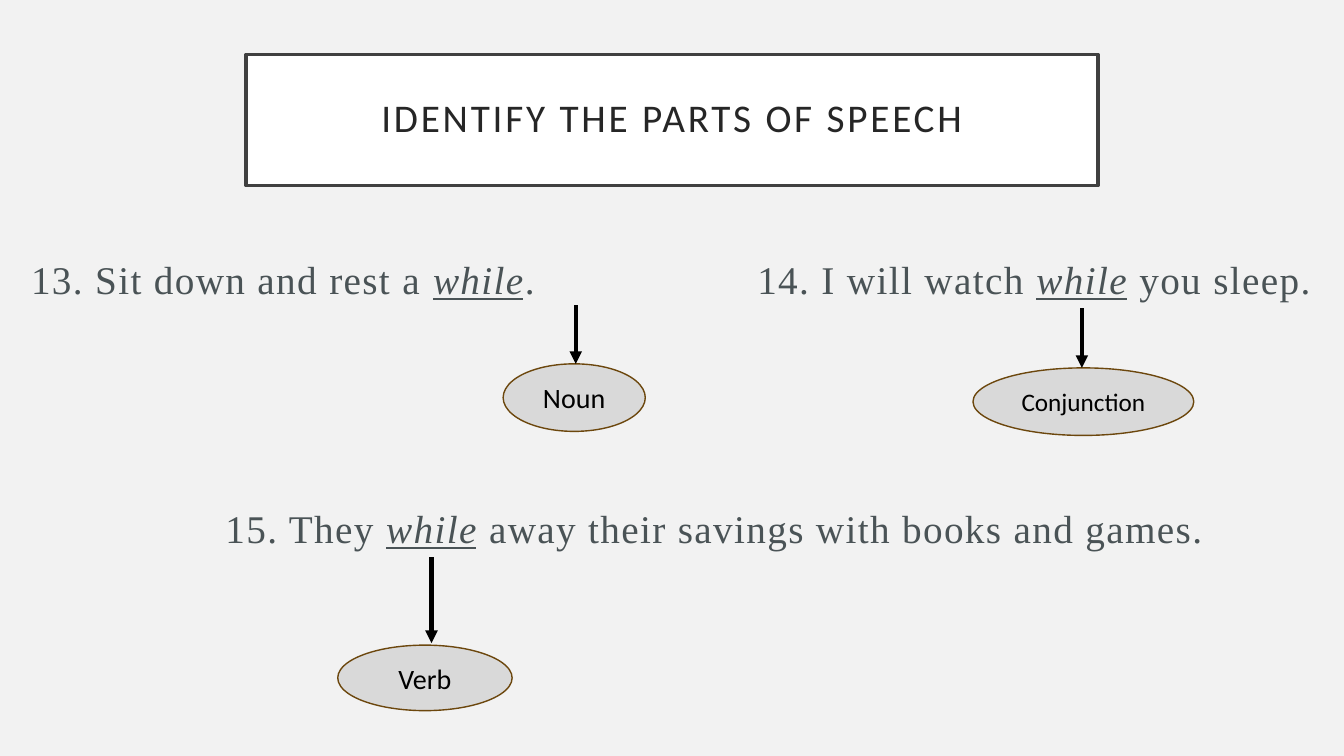
"""Build a slide that names the part of speech of one word in three sentences."""
from lxml.etree import SubElement
from pptx import Presentation
from pptx.dml.color import RGBColor
from pptx.enum.shapes import MSO_CONNECTOR, MSO_SHAPE
from pptx.enum.text import MSO_ANCHOR, PP_ALIGN
from pptx.oxml.ns import qn
from pptx.util import Inches, Pt

COLORS = {"back": "F2F2F2", "white": "FFFFFF", "frame": "404040", "title": "262626",
          "text": "4A5356", "oval": "D9D9D9", "rim": "6C470D", "black": "000000"}
TITLE = {"name": "Calibri", "size": Pt(28)}
BODY = {"name": "Times New Roman", "size": Pt(28)}
WORD = {**BODY, "italic": True, "underline": True}


def add_run(para, text, style, color, space=0):
    run = para.add_run()
    run.text = text
    for key, value in style.items():
        setattr(run.font, key, value)
    run.font.color.rgb = RGBColor.from_string(COLORS[color])
    if space:
        run._r.get_or_add_rPr().set("spc", str(space * 100))


def add_box(kind, area, fill, line, width):
    shape = slide.shapes.add_shape(kind, *map(Inches, area))
    shape.shadow.inherit = False
    shape.fill.solid()
    shape.fill.fore_color.rgb = RGBColor.from_string(COLORS[fill])
    shape.line.color.rgb = RGBColor.from_string(COLORS[line])
    shape.line.width = Pt(width)
    frame = shape.text_frame
    frame.word_wrap = True
    frame.vertical_anchor = MSO_ANCHOR.MIDDLE
    frame.paragraphs[0].alignment = PP_ALIGN.CENTER
    return frame


deck = Presentation()
deck.slide_width, deck.slide_height = Inches(13.33), Inches(7.5)
slide = deck.slides.add_slide(deck.slide_layouts[6])
slide.background.fill.solid()
slide.background.fill.fore_color.rgb = RGBColor.from_string(COLORS["back"])

frame = add_box(MSO_SHAPE.RECTANGLE, (2.44, 0.54, 8.45, 1.3), "white", "frame", 2.5)
for side in ("left", "top", "right", "bottom"):
    setattr(frame, f"margin_{side}", Inches(0.2))
frame.paragraphs[0].line_spacing = 0.9
add_run(frame.paragraphs[0], "IDENTIFY THE PARTS OF SPEECH", TITLE, "title", 2)

items = [
    ((0.21, 2.24, 7.2, 1.06), PP_ALIGN.LEFT, "13. Sit down and rest a ", ".",
     "Noun", 20, (4.99, 3.61, 1.41, 0.67), (5.71, 3.03, 3.61)),
    ((7.38, 2.28, 5.75, 0.97), PP_ALIGN.CENTER, "14. I will watch ", " you sleep.",
     "Conjunction", 18, (9.65, 3.65, 2.19, 0.67), (10.73, 3.06, 3.65)),
    ((1.74, 4.71, 10.69, 1.06), PP_ALIGN.CENTER, "15. They ",
     " away their savings with books and games.",
     "Verb", 20, (3.35, 6.4, 1.73, 0.65), (4.28, 5.53, 6.38)),
]
for area, align, start, end, label, size, oval, (x, top, tip) in items:
    frame = slide.shapes.add_textbox(*map(Inches, area)).text_frame
    frame.word_wrap = True
    frame.vertical_anchor = MSO_ANCHOR.MIDDLE
    para = frame.paragraphs[0]
    para.alignment = align
    para.space_before = Pt(10)
    for text, style in ((start, BODY), ("while", WORD), (end, BODY)):
        add_run(para, text, style, "text", 1)

    frame = add_box(MSO_SHAPE.OVAL, oval, "oval", "rim", 1)
    add_run(frame.paragraphs[0], label, {"name": "Calibri", "size": Pt(size)}, "black")

    arrow = slide.shapes.add_connector(MSO_CONNECTOR.STRAIGHT, *map(Inches, (x, top, x, tip)))
    arrow.line.color.rgb = RGBColor.from_string(COLORS["black"])
    arrow.line.width = Pt(3)
    SubElement(arrow.line._get_or_add_ln(), qn("a:tailEnd"), type="triangle")
    SubElement(arrow._element.spPr, qn("a:effectLst"))

deck.save("out.pptx")
